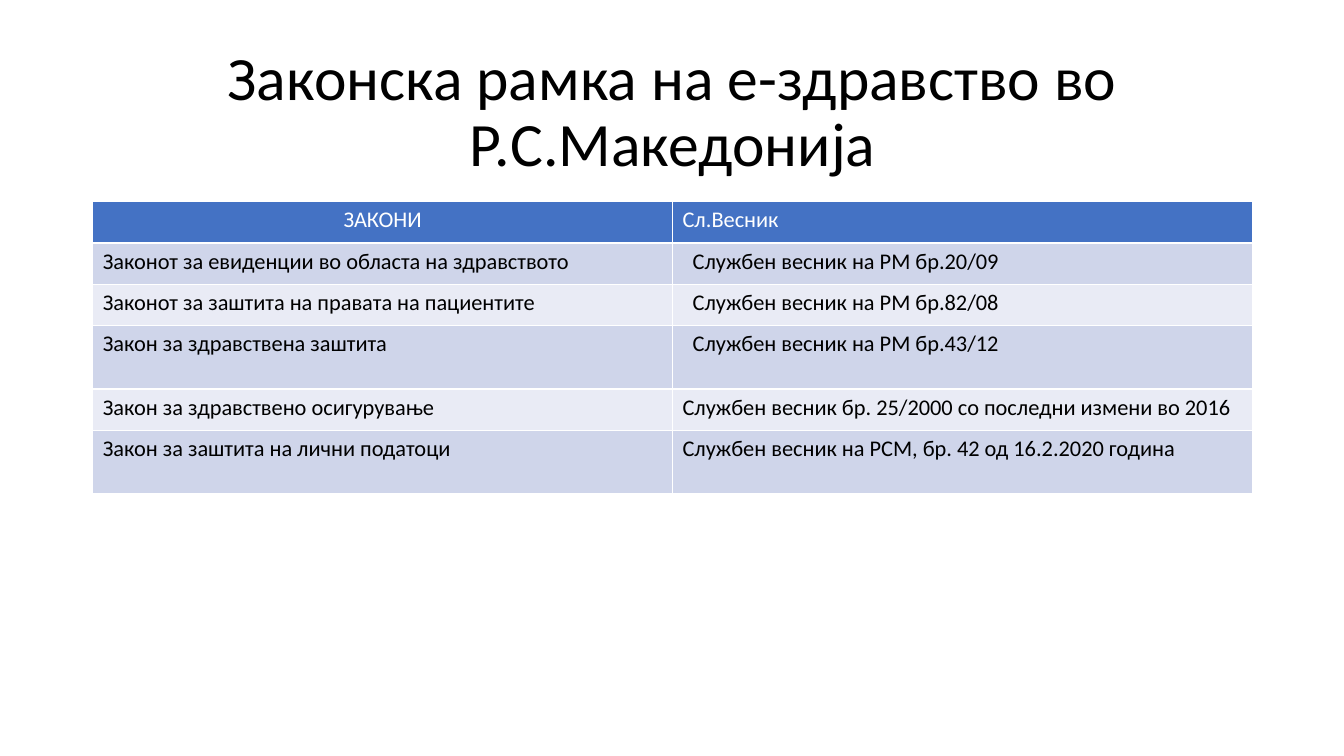
import pptx
import pptx.util
import pptx.dml.color
import pptx.enum.text

Inches, Pt = pptx.util.Inches, pptx.util.Pt
RGB = pptx.dml.color.RGBColor
ALIGN = pptx.enum.text.PP_ALIGN
ANCHOR = pptx.enum.text.MSO_ANCHOR

BLACK = RGB(0x00, 0x00, 0x00)
WHITE = RGB(0xFF, 0xFF, 0xFF)
BLUE = RGB(0x44, 0x72, 0xC4)
DARK = RGB(0xCF, 0xD5, 0xEA)
LIGHT = RGB(0xE9, 0xEB, 0xF5)

TITLE = "Законска рамка на е-здравство во Р.С.Македонија"
HEADS = ("ЗАКОНИ", "Сл.Весник")
# law, gazette, left margin of the gazette cell, row height
LAWS = [
    ("Законот за евиденции во областа на здравството",
     "Службен весник на РМ бр.20/09", 0.2, 0.41),
    ("Законот за заштита на правата на пациентите",
     "Службен весник на РМ бр.82/08", 0.2, 0.41),
    ("Закон за здравствена заштита",
     "Службен весник на РМ бр.43/12", 0.2, 0.63),
    ("Закон за здравствено осигурување",
     "Службен весник бр. 25/2000 со последни измени во 2016", 0.1, 0.41),
    ("Закон за заштита на лични податоци",
     "Службен весник на РСМ, бр. 42 од 16.2.2020 година", 0.1, 0.63),
]
LEFT, WIDTH = 0.92, 11.5
HEAD_H = 0.41


def write(frame, text, size=16, color=BLACK, align=ALIGN.LEFT, spacing=1.0):
    frame.word_wrap = True
    para = frame.paragraphs[0]
    para.alignment = align
    para.line_spacing = spacing
    run = para.add_run()
    run.text = text
    run.font.name = "Calibri"
    run.font.size = Pt(size)
    run.font.bold = False
    run.font.color.rgb = color


def paint(cell, color):
    cell.fill.solid()
    cell.fill.fore_color.rgb = color


def main():
    deck = pptx.Presentation()
    deck.slide_width, deck.slide_height = Inches(13.33), Inches(7.5)
    slide = deck.slides.add_slide(deck.slide_layouts[5])

    title = slide.shapes.title
    title.left, title.top = Inches(LEFT), Inches(0.4)
    title.width, title.height = Inches(WIDTH), Inches(1.45)
    title.text_frame.vertical_anchor = ANCHOR.MIDDLE
    write(title.text_frame, TITLE, size=44, align=ALIGN.CENTER, spacing=0.9)

    total = HEAD_H + sum(law[3] for law in LAWS)
    table = slide.shapes.add_table(
        len(LAWS) + 1, len(HEADS),
        Inches(LEFT), Inches(2), Inches(WIDTH), Inches(total)).table

    table.rows[0].height = Inches(HEAD_H)
    for col, (head, align) in enumerate(zip(HEADS, (ALIGN.CENTER, ALIGN.LEFT))):
        cell = table.cell(0, col)
        paint(cell, BLUE)
        write(cell.text_frame, head, color=WHITE, align=align)

    for row, (law, gazette, margin, height) in enumerate(LAWS, 1):
        table.rows[row].height = Inches(height)
        for col, text in enumerate((law, gazette)):
            cell = table.cell(row, col)
            paint(cell, DARK if row % 2 else LIGHT)
            write(cell.text_frame, text)
        table.cell(row, 1).margin_left = Inches(margin)

    deck.save("out.pptx")


if __name__ == "__main__":
    main()
